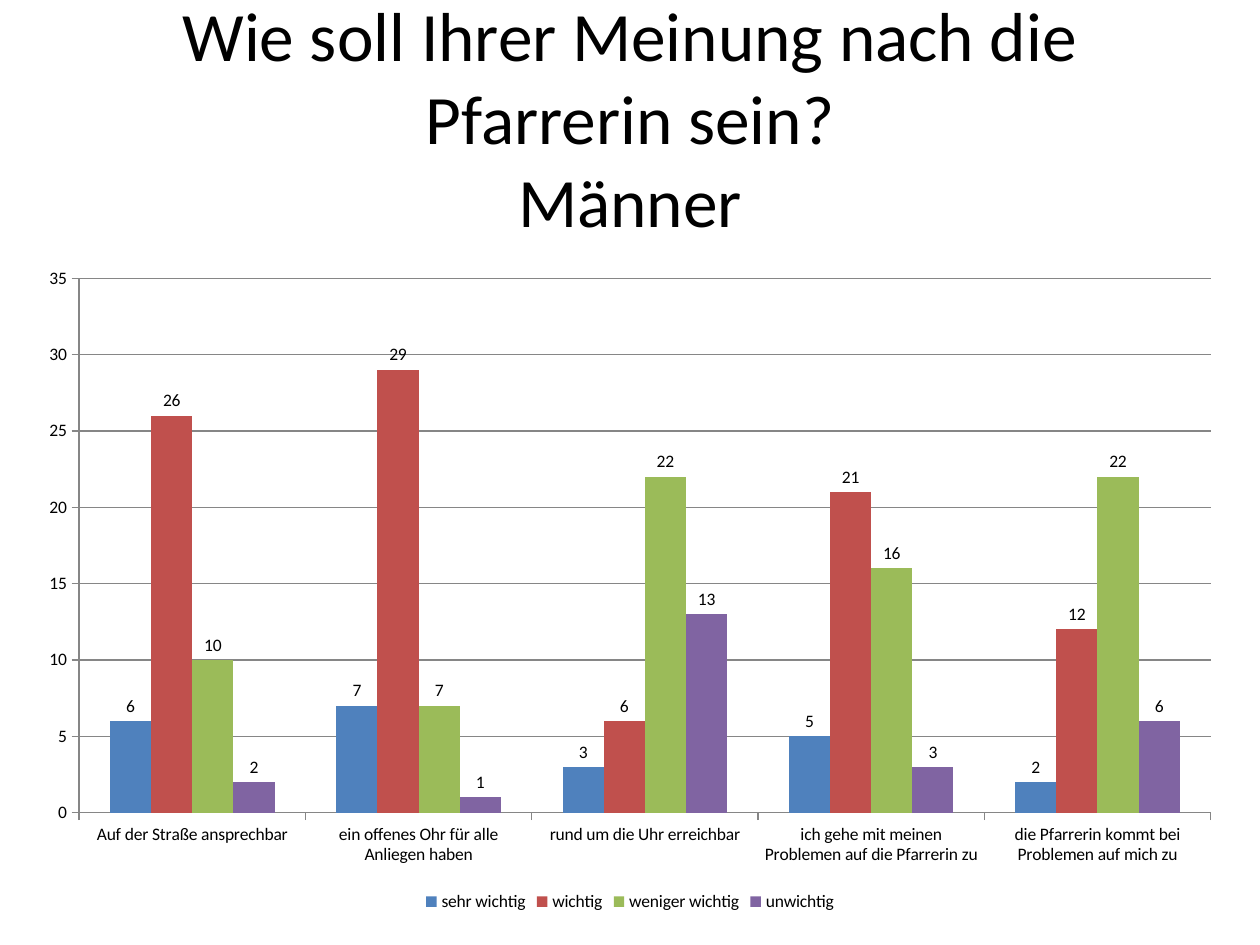
"""Build a slide with a clustered column chart of the men's survey answers."""
import pptx
import pptx.chart.data
import pptx.dml.color
import pptx.enum.chart
import pptx.enum.text
import pptx.util

COLORS = {
    "text": "000000",
    "axis": "868686",
    "sehr wichtig": "4F81BD",
    "wichtig": "C0504D",
    "weniger wichtig": "9BBB59",
    "unwichtig": "8064A2",
}
ANSWERS = {
    "sehr wichtig": (6, 7, 3, 5, 2),
    "wichtig": (26, 29, 6, 21, 12),
    "weniger wichtig": (10, 7, 22, 16, 22),
    "unwichtig": (2, 1, 13, 3, 6),
}


def color(key):
    return pptx.dml.color.RGBColor.from_string(COLORS[key])


deck = pptx.Presentation()
deck.slide_width = pptx.util.Inches(10)
deck.slide_height = pptx.util.Inches(7.5)
width, height = deck.slide_width, deck.slide_height
slide = deck.slides.add_slide(deck.slide_layouts[5])

question = slide.shapes.title
question.left, question.top = int(width * 0.05), int(height * 0.04)
question.width, question.height = int(width * 0.9), int(height / 6)
heading = question.text_frame
heading.word_wrap = True
heading.auto_size = pptx.enum.text.MSO_AUTO_SIZE.NONE
heading.vertical_anchor = pptx.enum.text.MSO_ANCHOR.MIDDLE
paragraph = heading.paragraphs[0]
paragraph.alignment = pptx.enum.text.PP_ALIGN.CENTER
for position, line in enumerate(("Wie soll Ihrer Meinung nach die Pfarrerin sein?", "Männer")):
    if position:
        paragraph.add_line_break()
    run = paragraph.add_run()
    run.text = line
    run.font.name = "Calibri"
    run.font.size = pptx.util.Pt(39.6)
    run.font.color.rgb = color("text")

survey = pptx.chart.data.CategoryChartData(number_format="General")
survey.categories = (
    "Auf der Straße ansprechbar",
    "ein offenes Ohr für alle Anliegen haben",
    "rund um die Uhr erreichbar",
    "ich gehe mit meinen Problemen auf die Pfarrerin zu",
    "die Pfarrerin kommt bei Problemen auf mich zu",
)
for answer, counts in ANSWERS.items():
    survey.add_series(answer, counts)

chart = slide.shapes.add_chart(
    pptx.enum.chart.XL_CHART_TYPE.COLUMN_CLUSTERED,
    int(width * 0.02), int(height * 0.27), int(width * 0.96), int(height * 0.7),
    survey,
).chart
chart.has_title = False
chart.font.name = "Calibri"
chart.font.size = pptx.util.Pt(10)
chart.font.color.rgb = color("text")
chart.has_legend = True
chart.legend.position = pptx.enum.chart.XL_LEGEND_POSITION.BOTTOM
chart.legend.include_in_layout = False

counts_axis = chart.value_axis
counts_axis.minimum_scale, counts_axis.maximum_scale = 0, 35
counts_axis.major_unit = 5
counts_axis.has_major_gridlines = True
for axis in (chart.category_axis, counts_axis):
    axis.major_tick_mark = pptx.enum.chart.XL_TICK_MARK.OUTSIDE
    axis.minor_tick_mark = pptx.enum.chart.XL_TICK_MARK.NONE
for rule in (chart.category_axis, counts_axis, counts_axis.major_gridlines):
    rule.format.line.color.rgb = color("axis")
    rule.format.line.width = pptx.util.Pt(0.75)

columns = chart.plots[0]
columns.gap_width = 150
columns.overlap = 0
columns.vary_by_categories = False
for answer in columns.series:
    answer.format.fill.solid()
    answer.format.fill.fore_color.rgb = color(answer.name)
    labels = answer.data_labels
    labels.show_value = True
    labels.position = pptx.enum.chart.XL_LABEL_POSITION.OUTSIDE_END

deck.save("out.pptx")
